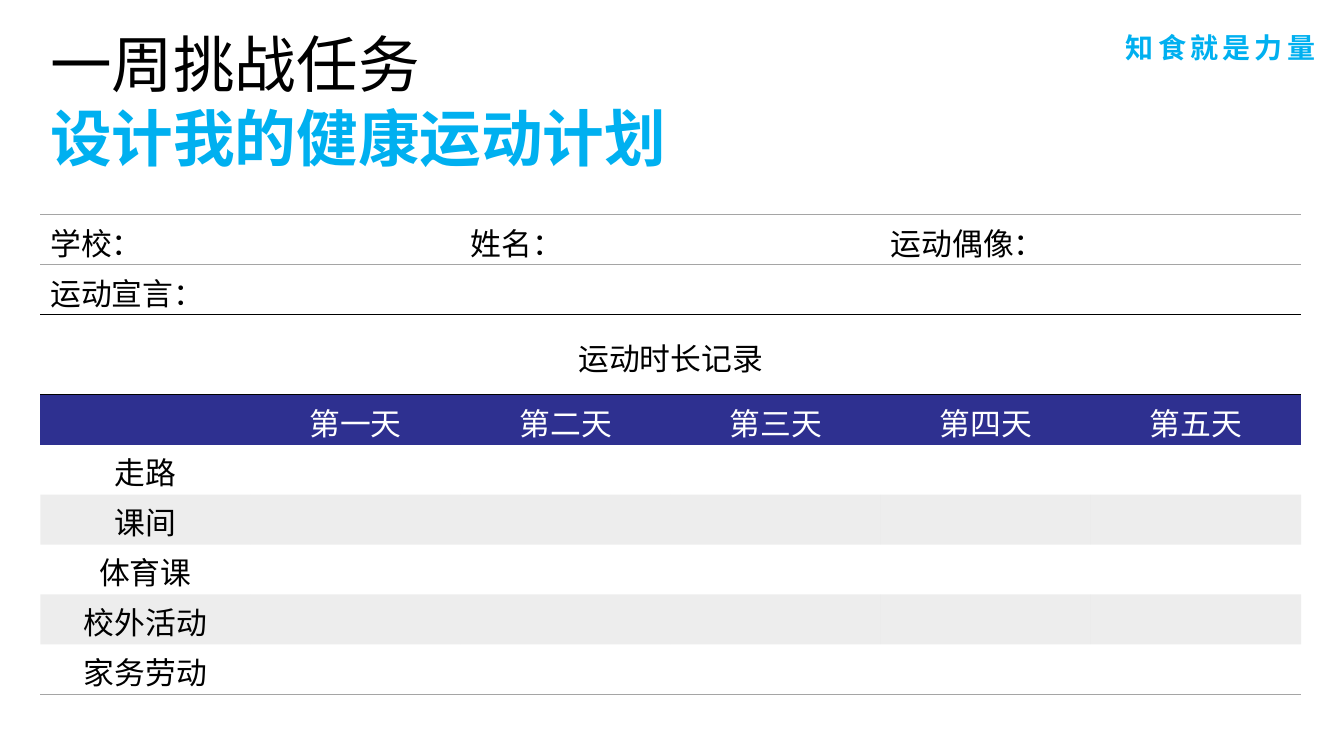
"""Build the one-week exercise plan slide."""
from dataclasses import dataclass

import pptx
import pptx.dml.color
import pptx.enum.text
import pptx.oxml.ns
import pptx.util
from lxml import etree

Pt = pptx.util.Pt
Color = pptx.dml.color.RGBColor
Align = pptx.enum.text.PP_ALIGN
qn = pptx.oxml.ns.qn

FONT = "Noto Sans CJK SC"
BLACK = Color(0x00, 0x00, 0x00)
WHITE = Color(0xFF, 0xFF, 0xFF)
SKY = Color(0x00, 0xB0, 0xF0)
NAVY = Color(0x2E, 0x30, 0x90)
GRAY = Color(0xA5, 0xA5, 0xA5)
PLAIN = "{2D5ABB26-0587-4C30-8999-92F81FD0307C}"
COLS = 6
WIDTH = 150.1
HEIGHT = 35.7
TALL = 57.1


@dataclass
class Line:
    text: str
    size: float
    color: Color = BLACK
    bold: bool = False
    align: Align = Align.LEFT
    gap: int = 0
    pitch: float = 0


@dataclass
class Box:
    left: float
    top: float
    width: float
    height: float
    lines: list[Line]


@dataclass
class Row:
    texts: dict[int, str]
    align: Align = Align.CENTER
    color: Color = BLACK
    fill: Color | None = None
    alpha: int = 100
    above: Color | None = None
    below: Color | None = None
    height: float = HEIGHT


BOXES = [
    Box(776.9, 15.8, 190.1, 31.7, [
        Line("知食就是力量", 20, SKY, True, Align.CENTER, 300, 24)]),
    Box(28.8, 12.2, 496.8, 113.8, [
        Line("一周挑战任务", 44, pitch=53),
        Line("设计我的健康运动计划", 44, SKY, True, pitch=53)]),
]
DAYS = {i: f"第{day}天" for i, day in enumerate("一二三四五", 1)}
ROWS = [
    Row({0: "学校：", 2: "姓名：", 4: "运动偶像："}, Align.LEFT,
        above=GRAY, below=GRAY),
    Row({0: "运动宣言："}, Align.LEFT, fill=WHITE, alpha=20, below=BLACK),
    Row({0: "运动时长记录"}, above=BLACK, below=BLACK, height=TALL),
    Row(DAYS, color=WHITE, fill=NAVY),
    Row({0: "走路"}),
    Row({0: "课间"}, fill=GRAY, alpha=20),
    Row({0: "体育课"}),
    Row({0: "校外活动"}, fill=GRAY, alpha=20),
    Row({0: "家务劳动"}, below=GRAY),
]


def write(para, line: Line) -> None:
    """Put one styled line into a paragraph."""
    para.text = line.text
    para.alignment = line.align
    if line.pitch:
        para.line_spacing = Pt(line.pitch)
    font = para.font
    font.name = FONT
    font.size = Pt(line.size)
    font.bold = line.bold
    font.color.rgb = line.color
    props = para._p.pPr.find(qn("a:defRPr"))
    props.find(qn("a:latin")).addnext(
        etree.Element(qn("a:ea"), typeface=FONT))
    if line.gap:
        props.set("spc", str(line.gap))


def place(slide, box: Box) -> None:
    """Add a text box."""
    shape = slide.shapes.add_textbox(
        Pt(box.left), Pt(box.top), Pt(box.width), Pt(box.height))
    frame = shape.text_frame
    frame.word_wrap = True
    frame.margin_top = Pt(6)
    frame.margin_bottom = Pt(0)
    for i, line in enumerate(box.lines):
        write(frame.add_paragraph() if i else frame.paragraphs[0], line)


def rule(cell, side: str, color: Color) -> None:
    """Draw a one-point border on a cell side."""
    edge = etree.Element(qn(f"a:{side}"), w=str(Pt(1)))
    fill = etree.SubElement(edge, qn("a:solidFill"))
    etree.SubElement(fill, qn("a:srgbClr"), val=str(color))
    cell._tc.get_or_add_tcPr().insert(0, edge)


def paint(cell, row: Row) -> None:
    """Fill and border a cell."""
    if row.fill is None:
        cell.fill.background()
    else:
        cell.fill.solid()
        cell.fill.fore_color.rgb = row.fill
        if row.alpha < 100:
            tint = cell._tc.tcPr.find(".//" + qn("a:srgbClr"))
            etree.SubElement(tint, qn("a:alpha"), val=str(row.alpha * 1000))
    if row.below is not None:
        rule(cell, "lnB", row.below)
    if row.above is not None:
        rule(cell, "lnT", row.above)


def chart(slide) -> None:
    """Add the weekly record table."""
    total = sum(row.height for row in ROWS)
    table = slide.shapes.add_table(
        len(ROWS), COLS, Pt(28.8), Pt(153.4),
        Pt(WIDTH * COLS), Pt(total)).table
    table.first_row = table.horz_banding = False
    table._tbl.tblPr.find(qn("a:tableStyleId")).text = PLAIN
    for col in table.columns:
        col.width = Pt(WIDTH)
    for r, row in enumerate(ROWS):
        table.rows[r].height = Pt(row.height)
        for c in range(COLS):
            cell = table.cell(r, c)
            paint(cell, row)
            cell.vertical_anchor = pptx.enum.text.MSO_ANCHOR.MIDDLE
            cell.margin_top = Pt(3)
            cell.margin_bottom = Pt(0)
            if c in row.texts:
                write(cell.text_frame.paragraphs[0],
                      Line(row.texts[c], 22, row.color, align=row.align))
    table.cell(2, 0).merge(table.cell(2, COLS - 1))


def main() -> None:
    """Build and save the slide."""
    deck = pptx.Presentation()
    deck.slide_width = Pt(960)
    deck.slide_height = Pt(540)
    slide = deck.slides.add_slide(deck.slide_layouts[6])
    for box in BOXES:
        place(slide, box)
    chart(slide)
    deck.save("out.pptx")


if __name__ == "__main__":
    main()
